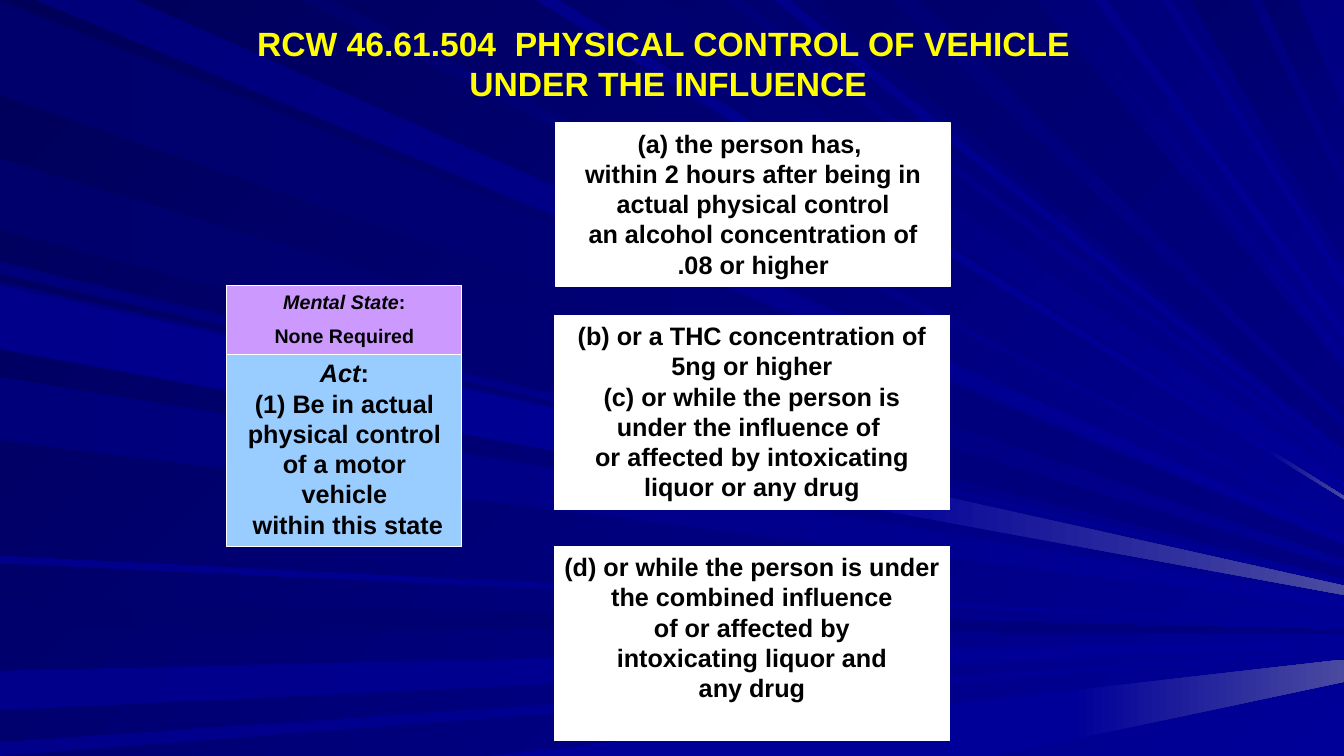
from pptx import Presentation
from pptx.dml.color import RGBColor
from pptx.enum.shapes import MSO_SHAPE
from pptx.enum.text import MSO_ANCHOR, PP_ALIGN
from pptx.util import Cm, Pt

RECTANGLE = MSO_SHAPE.RECTANGLE
CENTER = PP_ALIGN.CENTER
TOP, MIDDLE = MSO_ANCHOR.TOP, MSO_ANCHOR.MIDDLE

BLACK = RGBColor.from_string("000000")
WHITE = RGBColor.from_string("FFFFFF")
YELLOW = RGBColor.from_string("FFFF00")
SKY = RGBColor.from_string("99CCFF")
LILAC = RGBColor.from_string("CC99FF")
NIGHT = RGBColor.from_string("000058")
DEEP = RGBColor.from_string("00006D")
NAVY = RGBColor.from_string("00007B")
NAVAL = RGBColor.from_string("000080")
ROYAL = RGBColor.from_string("00008A")
BLUE = RGBColor.from_string("000099")
GLOW = RGBColor.from_string("4A4AA1")

FONT = "Arial"
WIDTH, HEIGHT = 33.87, 19.05
VANISH_X, VANISH_Y = 39.4, 16

LEFT_RAYS = [
    (0, 2.4, DEEP, NAVAL),
    (15.1, 15.8, DEEP, NAVAL),
    (16.9, 17.9, ROYAL, BLUE),
    (18.7, HEIGHT, ROYAL, BLUE),
    (6.6, 6.9, NAVY, BLUE),
    (4, 5.8, DEEP, NAVAL),
    (7.1, 8.7, NAVY, BLUE),
    (9.5, 11.1, NAVY, BLUE),
    (14, 14.2, ROYAL, BLUE),
]
TOP_RAYS = [
    (0.9, 3.4, NAVY, BLUE),
    (14.4, 16.7, DEEP, BLUE),
    (18.3, 18.7, NAVY, BLUE),
    (20.5, 22.4, DEEP, NAVAL),
    (30, 31.5, DEEP, NAVAL),
    (31.8, 32.7, DEEP, NAVAL),
    (7.6, 8.4, DEEP, BLUE),
    (19.5, 19.9, ROYAL, BLUE),
    (23.2, 26.1, DEEP, NAVAL),
    (26.6, 26.8, NAVY, BLUE),
    (27.6, 27.9, ROYAL, BLUE),
    (29.3, 29.5, ROYAL, BLUE),
]

TITLE = ["RCW 46.61.504  PHYSICAL CONTROL OF VEHICLE ", "UNDER THE INFLUENCE"]
ACT = ["Act:", "(1) Be in actual physical control of a motor vehicle", " within this state"]
MENTAL_STATE = ["Mental State:", "None Required"]
ALCOHOL = [
    "(a) the person has, ",
    "within 2 hours after being in actual physical control",
    "an alcohol concentration of",
    ".08 or higher",
]
THC_OR_DRUG = [
    "(b) or a THC concentration of 5ng or higher",
    "(c) or while the person is",
    "under the influence of ",
    "or affected by intoxicating",
    "liquor or any drug",
]
COMBINED = [
    "(d) or while the person is under",
    "the combined influence",
    "of or affected by",
    "intoxicating liquor and",
    "any drug",
]


def shade(fill, start, end, angle):
    fill.gradient()
    fill.gradient_angle = -angle % 360
    for stop, color in zip(fill.gradient_stops, (start, end)):
        stop.color.rgb = color


def toward_vanishing(origin, x):
    left, top = origin
    return x, top + (VANISH_Y - top) * (x - left) / (VANISH_X - left)


def draw_ray(slide, first, last, start, end, angle, reach=WIDTH):
    corners = [first, toward_vanishing(first, reach), toward_vanishing(last, reach), last]
    points = [(round(x * 100), round(y * 100)) for x, y in corners]
    outline = slide.shapes.build_freeform(*points[0], scale=Cm(0.01))
    outline.add_line_segments(points[1:], close=True)
    ray = outline.convert_to_shape()
    ray.shadow.inherit = False
    ray.line.fill.background()
    shade(ray.fill, start, end, angle)


def draw_glowing_ray(slide, first, last, start, angle, split):
    draw_ray(slide, first, last, start, BLUE, angle, split)
    draw_ray(slide, toward_vanishing(first, split), toward_vanishing(last, split),
             BLUE, GLOW, angle)


def draw_backdrop(slide):
    shade(slide.background.fill, NIGHT, BLUE, 45)
    for upper, lower, start, end in LEFT_RAYS:
        draw_ray(slide, (0, upper), (0, lower), start, end, 0)
    for near, far, start, end in TOP_RAYS:
        draw_ray(slide, (near, 0), (far, 0), start, end, 45)
    draw_glowing_ray(slide, (12.3, HEIGHT), (25.1, HEIGHT), BLUE, 0, 27)
    draw_glowing_ray(slide, (13.5, 0), (14.1, 0), ROYAL, 45, 32)
    draw_glowing_ray(slide, (0, 7.2), (0, 8.8), ROYAL, 0, 21.5)


def write_lines(frame, lines, size, color, gap=0, italic_heading=False):
    frame.text = "\n".join(lines)
    for index, paragraph in enumerate(frame.paragraphs):
        paragraph.alignment = CENTER
        if index and gap:
            paragraph.space_before = Pt(gap)
        if italic_heading and index == 0:
            paragraph.text = lines[0].rstrip(":")
            paragraph.runs[0].font.italic = True
            paragraph.add_run().text = ":"
        for run in paragraph.runs:
            run.font.name = FONT
            run.font.size = Pt(size)
            run.font.bold = True
            run.font.color.rgb = color


def draw_panel(slide, box, lines, color, size=18, **style):
    panel = slide.shapes.add_shape(RECTANGLE, *map(Cm, box))
    panel.shadow.inherit = False
    panel.fill.solid()
    panel.fill.fore_color.rgb = color
    panel.line.color.rgb = WHITE
    panel.line.width = Pt(0.75)
    panel.text_frame.word_wrap = True
    panel.text_frame.vertical_anchor = TOP
    write_lines(panel.text_frame, lines, size, BLACK, **style)


def draw_offense(slide, left, top, width):
    draw_panel(slide, (left, top + 1.7, width, 4.88), ACT, SKY, italic_heading=True)
    draw_panel(slide, (left, top, width, 1.75), MENTAL_STATE, LILAC,
               size=14, gap=7.5, italic_heading=True)


def draw_alternatives(slide, left, top, width):
    draw_panel(slide, (left + 0.03, top, width, 4.11), ALCOHOL, WHITE)
    draw_panel(slide, (left, top + 4.85, width, 4.88), THC_OR_DRUG, WHITE)
    draw_panel(slide, (left, top + 10.67, width, 4.88), COMBINED, WHITE)


def draw_title(slide, box):
    title = slide.shapes.add_textbox(*map(Cm, box))
    title.text_frame.word_wrap = False
    title.text_frame.vertical_anchor = MIDDLE
    write_lines(title.text_frame, TITLE, 24, YELLOW)


def main():
    deck = Presentation()
    deck.slide_width, deck.slide_height = Cm(WIDTH), Cm(HEIGHT)
    slide = deck.slides.add_slide(deck.slide_layouts[6])
    draw_backdrop(slide)
    draw_offense(slide, 5.72, 7.19, 5.92)
    draw_alternatives(slide, 13.97, 3.1, 9.96)
    draw_title(slide, (5.51, 0.64, 22.66, 1.9))
    deck.save("out.pptx")


if __name__ == "__main__":
    main()
